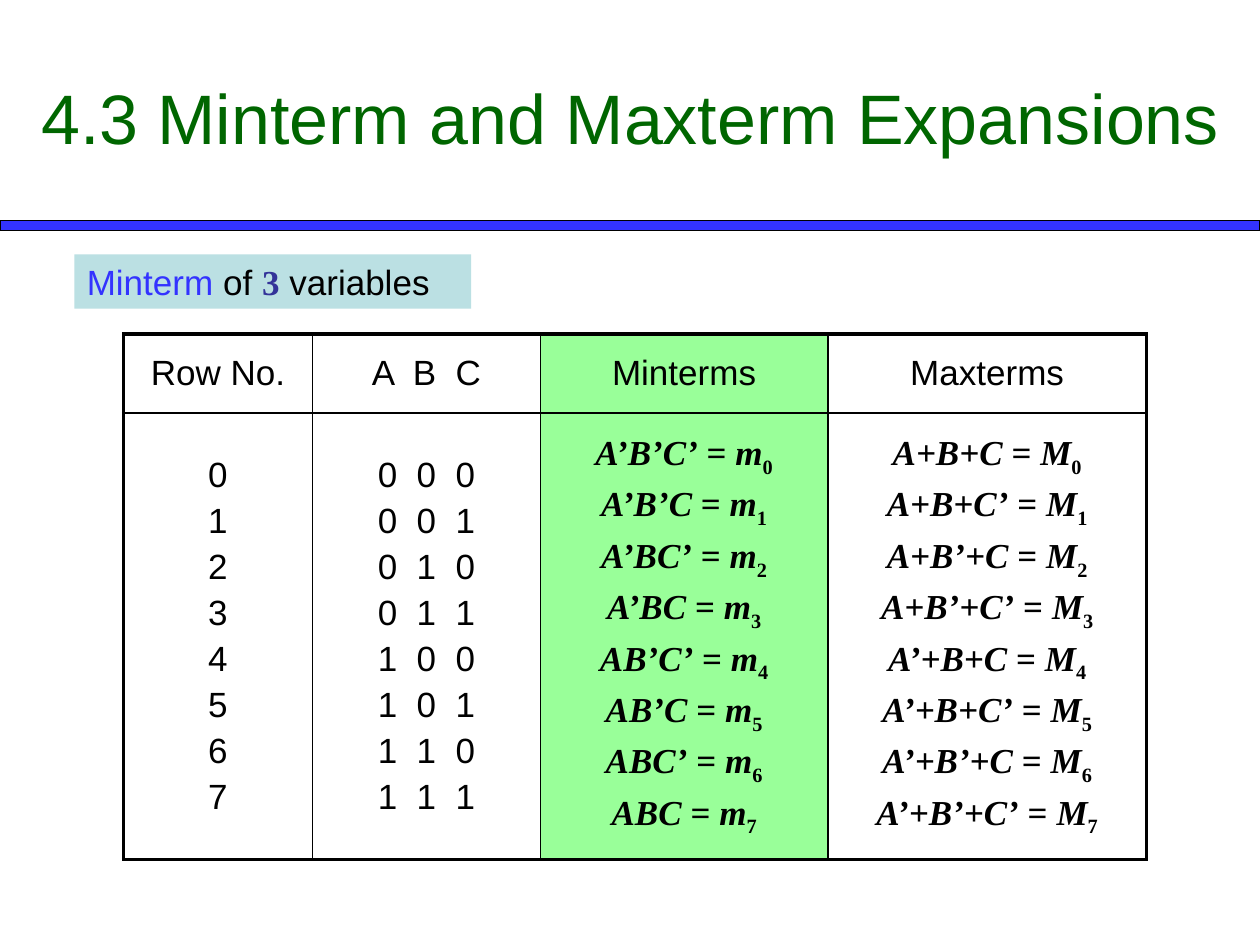
from itertools import product

from lxml.etree import SubElement
from pptx import Presentation
from pptx.dml.color import RGBColor
from pptx.enum.shapes import MSO_SHAPE
from pptx.enum.text import MSO_ANCHOR, PP_ALIGN
from pptx.oxml import parse_xml
from pptx.oxml.ns import nsdecls, qn
from pptx.util import Inches, Pt

BLACK = RGBColor(0x00, 0x00, 0x00)
GREEN = RGBColor(0x00, 0x66, 0x00)
BLUE = RGBColor(0x33, 0x33, 0xFF)
NAVY = RGBColor(0x33, 0x33, 0x99)
PALE_BLUE = RGBColor(0xBB, 0xE0, 0xE3)
PALE_GREEN = RGBColor(0x99, 0xFF, 0x99)

SANS, SERIF = "Arial", "Times New Roman"
WIDTH, HEIGHT = Inches(10), Inches(7.5)
THICK, THIN = Pt(2.25), Pt(1)

# Percentages of the slide's width and height
COLUMNS = (15, 18.1, 22.8, 25.3)
ROWS = (8.4, 47.2)
HEADINGS = ("Row No.", "A  B  C", "Minterms", "Maxterms")
MINTERM_COLUMN = 2


def across(share):
    return int(WIDTH * share / 100)


def down(share):
    return int(HEIGHT * share / 100)


def area(x, y, w, h):
    return across(x), down(y), across(w), down(h)


def add_run(p, text, size=20, color=BLACK, font=SANS, bold=False, italic=False):
    r = p.add_run()
    r.text = text
    r.font.size, r.font.name = Pt(size), font
    r.font.bold, r.font.italic = bold, italic
    r.font.color.rgb = color
    return r


def space_before(p, percent):
    """Set paragraph spacing relative to the line height."""
    spacing = SubElement(p._p.get_or_add_pPr(), qn("a:spcBef"))
    SubElement(spacing, qn("a:spcPct")).set("val", str(percent * 1000))


def add_title(slide, text):
    tf = slide.shapes.add_textbox(*area(0, 4, 100, 16.67)).text_frame
    tf.word_wrap = True
    tf.vertical_anchor = MSO_ANCHOR.MIDDLE
    p = tf.paragraphs[0]
    p.alignment = PP_ALIGN.CENTER
    add_run(p, text, 40, GREEN)


def add_rectangle(slide, bounds, color, outlined=False):
    sp = slide.shapes.add_shape(MSO_SHAPE.RECTANGLE, *bounds)
    sp.shadow.inherit = False
    sp.fill.solid()
    sp.fill.fore_color.rgb = color
    if outlined:
        sp.line.color.rgb = BLACK
        sp.line.width = Pt(0.75)
    else:
        sp.line.fill.background()
    return sp


def add_caption(slide):
    sp = add_rectangle(slide, area(5.9, 26.93, 31.5, 5.73), PALE_BLUE)
    p = sp.text_frame.paragraphs[0]
    p.alignment = PP_ALIGN.LEFT
    add_run(p, "Minterm", color=BLUE)
    add_run(p, " of ")
    add_run(p, "3", color=NAVY, font=SERIF, bold=True)
    add_run(p, " variables")


def literals(bits, primed_bit, joiner):
    return joiner.join(name + ("’" if bit == primed_bit else "")
                       for name, bit in zip("ABC", bits))


def add_plain(p, text):
    add_run(p, text)


def add_equation(p, equation):
    """Write an expression, an equals sign and a subscripted term name."""
    expression, term, index = equation
    for text, italic in ((expression, True), (" = ", False), (term, True)):
        add_run(p, text, font=SERIF, bold=True, italic=italic)
    r = add_run(p, str(index), font=SERIF, bold=True)
    r._r.get_or_add_rPr().set("baseline", "-25000")


def fill_cell(cell, lines, write):
    cell.vertical_anchor = MSO_ANCHOR.MIDDLE
    tf = cell.text_frame
    for i, line in enumerate(lines):
        p = tf.add_paragraph() if i else tf.paragraphs[0]
        p.alignment = PP_ALIGN.CENTER
        space_before(p, 20)
        write(p, line)


def set_borders(cell, row, column):
    """Draw thick lines on the table's outside and thin ones within."""
    outside = {"L": column == 0, "R": column == len(COLUMNS) - 1,
               "T": row == 0, "B": row == len(ROWS) - 1}
    tc_pr = cell._tc.get_or_add_tcPr()
    for i, (side, is_outside) in enumerate(outside.items()):
        width = THICK if is_outside else THIN
        tc_pr.insert(i, parse_xml(
            f'<a:ln{side} {nsdecls("a")} w="{width}"><a:solidFill>'
            f'<a:srgbClr val="{BLACK}"/></a:solidFill></a:ln{side}>'))


def add_truth_table(slide):
    bounds = area(9.8, 35.33, sum(COLUMNS), sum(ROWS))
    table = slide.shapes.add_table(len(ROWS), len(COLUMNS), *bounds).table
    table.first_row = table.horz_banding = False
    for column, share in zip(table.columns, COLUMNS):
        column.width = across(share)
    for row, share in zip(table.rows, ROWS):
        row.height = down(share)

    inputs = list(enumerate(product((0, 1), repeat=3)))
    bodies = (
        ([str(n) for n, _ in inputs], add_plain),
        (["  ".join(map(str, bits)) for _, bits in inputs], add_plain),
        ([(literals(bits, 0, ""), "m", n) for n, bits in inputs], add_equation),
        ([(literals(bits, 1, "+"), "M", n) for n, bits in inputs], add_equation),
    )
    for column, (heading, body) in enumerate(zip(HEADINGS, bodies)):
        for row, (lines, write) in enumerate((([heading], add_plain), body)):
            cell = table.cell(row, column)
            fill_cell(cell, lines, write)
            if column == MINTERM_COLUMN:
                cell.fill.solid()
                cell.fill.fore_color.rgb = PALE_GREEN
            else:
                cell.fill.background()
            set_borders(cell, row, column)


def main():
    prs = Presentation()
    prs.slide_width, prs.slide_height = WIDTH, HEIGHT
    slide = prs.slides.add_slide(prs.slide_layouts[6])
    add_rectangle(slide, area(0, 23.33, 100, 1.07), BLUE, outlined=True)
    add_title(slide, "4.3 Minterm and Maxterm Expansions")
    add_truth_table(slide)
    add_caption(slide)
    prs.save("out.pptx")


if __name__ == "__main__":
    main()
